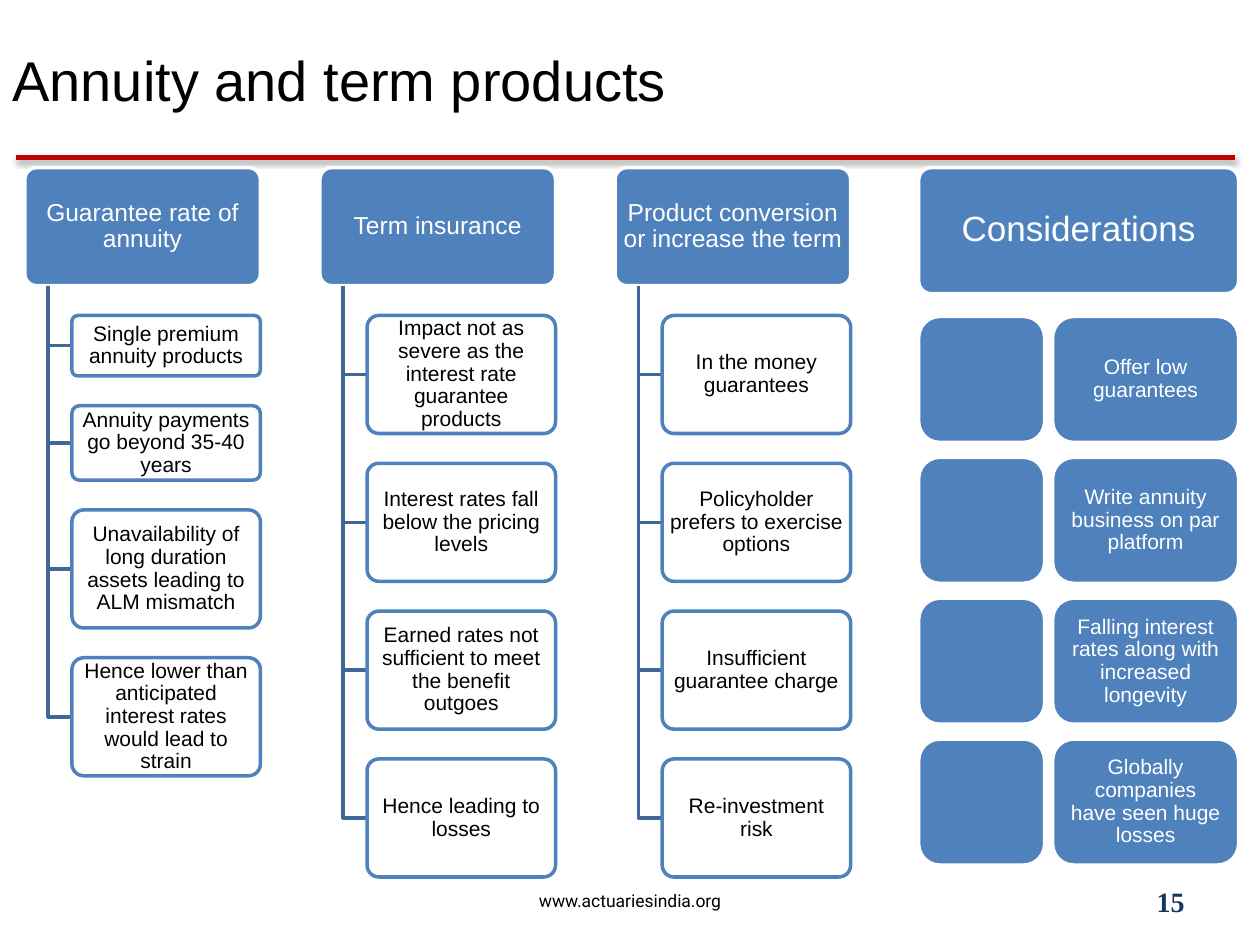
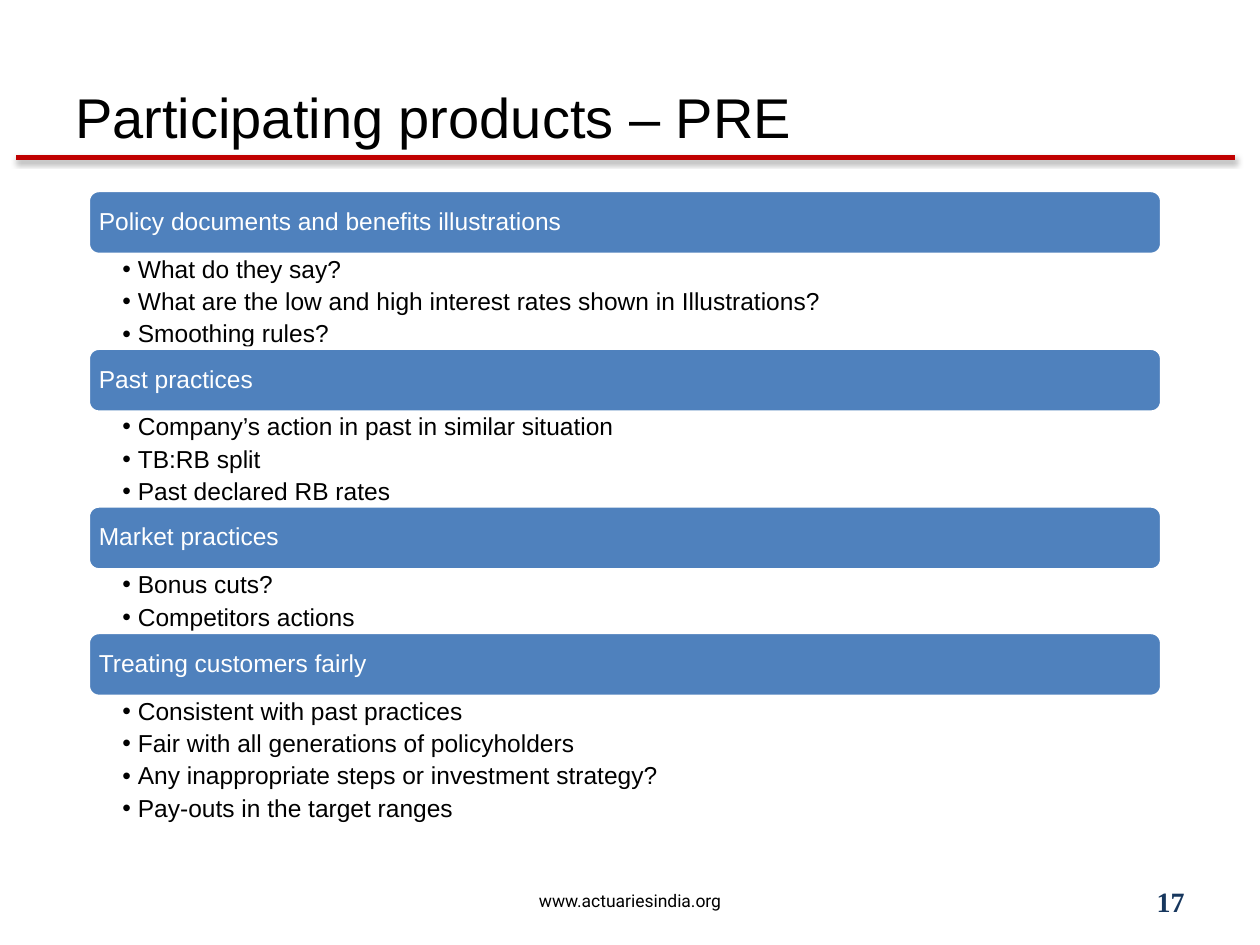
from lxml import etree
from pptx import Presentation
from pptx.dml.color import RGBColor
from pptx.enum.shapes import MSO_CONNECTOR, MSO_SHAPE
from pptx.enum.text import MSO_ANCHOR, PP_ALIGN
from pptx.oxml.ns import qn
from pptx.util import Cm, Pt

ROUNDED, STRAIGHT = MSO_SHAPE.ROUNDED_RECTANGLE, MSO_CONNECTOR.STRAIGHT
TOP, MIDDLE = MSO_ANCHOR.TOP, MSO_ANCHOR.MIDDLE
LEFT, CENTER, RIGHT = PP_ALIGN.LEFT, PP_ALIGN.CENTER, PP_ALIGN.RIGHT

BLUE, DARK_BLUE, NAVY = "4F81BD", "3F6797", "17375E"
RED, WHITE, BLACK = "C00000", "FFFFFF", "000000"

PRODUCTS = [
    ("Guarantee rate of annuity", [
        ("Single premium annuity products", 1.22),
        ("Annuity payments go beyond 35-40 years", 1.5),
        ("Unavailability of long duration assets leading to ALM mismatch", 2.38),
        ("Hence lower than anticipated interest rates would lead to strain", 2.38)]),
    ("Term insurance", [
        ("Impact not as severe as the interest rate guarantee products", 2.38),
        ("Interest rates fall below the pricing levels", 2.38),
        ("Earned rates not sufficient to meet the benefit outgoes", 2.38),
        ("Hence leading to losses", 2.38)]),
    ("Product conversion or increase the term", [
        ("In the money guarantees", 2.38),
        ("Policyholder prefers to exercise options", 2.38),
        ("Insufficient guarantee charge", 2.38),
        ("Re-investment risk", 2.38)]),
]
CONSIDERATIONS = [
    "Offer low guarantees",
    "Write annuity business on par platform",
    "Falling interest rates along with increased longevity",
    "Globally companies have seen huge losses",
]
EXPECTATIONS = [
    ("Policy documents and benefits illustrations", [
        "What do they say?",
        "What are the low and high interest rates shown in Illustrations?",
        "Smoothing rules?"]),
    ("Past practices", [
        "Company’s action in past in similar situation",
        "TB:RB split",
        "Past declared RB rates"]),
    ("Market practices", ["Bonus cuts?", "Competitors actions"]),
    ("Treating customers fairly", [
        "Consistent with past practices",
        "Fair with all generations of policyholders",
        "Any inappropriate steps or investment strategy?",
        "Pay-outs in the target ranges"]),
]


def rgb(color):
    return RGBColor.from_string(color)


def add_bullet(p, indent):
    pPr = p._p.get_or_add_pPr()
    pPr.set("marL", str(indent))
    pPr.set("indent", str(-indent))
    etree.SubElement(pPr, qn("a:buFont"), typeface="Arial")
    etree.SubElement(pPr, qn("a:buChar"), char="•")


def write_text(sp, *lines, size=12, color=BLACK, font="Arial", bold=False,
               align=LEFT, anchor=MIDDLE, insets=(0.25, 0.13, 0.25, 0.13),
               spacing=0.9, after=0, bullet=False):
    tf = sp.text_frame
    tf.word_wrap = True
    tf.vertical_anchor = anchor
    (tf.margin_left, tf.margin_top,
     tf.margin_right, tf.margin_bottom) = map(Cm, insets)
    for i, line in enumerate(lines):
        p = tf.add_paragraph() if i else tf.paragraphs[0]
        if bullet:
            add_bullet(p, Cm(0.31))
        p.alignment = align
        p.line_spacing = spacing
        p.space_after = Pt(after)
        r = p.add_run()
        r.text = line
        r.font.name, r.font.size, r.font.bold = font, Pt(size), bold
        r.font.color.rgb = rgb(color)


def add_text(s, x, y, w, h, *lines, **fmt):
    write_text(s.shapes.add_textbox(Cm(x), Cm(y), Cm(w), Cm(h)), *lines, **fmt)


def add_box(s, x, y, w, h, text=None, fill=BLUE, line=WHITE, corner=0.1, **fmt):
    sp = s.shapes.add_shape(ROUNDED, Cm(x), Cm(y), Cm(w), Cm(h))
    sp.adjustments[0] = corner
    sp.shadow.inherit = False
    sp.fill.solid()
    sp.fill.fore_color.rgb = rgb(fill)
    sp.line.color.rgb = rgb(line)
    sp.line.width = Pt(2)
    if text:
        write_text(sp, text, **fmt)


def add_elbow(s, x, top, bottom, right):
    builder = s.shapes.build_freeform(Cm(x), Cm(top), scale=1.0)
    builder.add_line_segments(
        [(Cm(x), Cm(bottom)), (Cm(right), Cm(bottom))], close=False)
    sp = builder.convert_to_shape()
    sp.shadow.inherit = False
    sp.fill.background()
    sp.line.color.rgb = rgb(DARK_BLUE)
    sp.line.width = Pt(2)


def add_rule(s):
    rule = s.shapes.add_connector(STRAIGHT, Cm(0.33), Cm(3.18), Cm(24.9), Cm(3.18))
    rule.line.color.rgb = rgb(RED)
    rule.line.width = Pt(3)
    effects = etree.SubElement(rule._element.spPr, qn("a:effectLst"))
    shadow = etree.SubElement(effects, qn("a:outerShdw"), blurRad=str(Pt(3.1)),
                              dist=str(Pt(1.6)), dir="5400000", rotWithShape="0")
    shade = etree.SubElement(shadow, qn("a:srgbClr"), val=BLACK)
    etree.SubElement(shade, qn("a:alpha"), val="38000")


def add_slide(prs, title, number, title_x, title_y):
    """Blank slide with the shared rule, title and footer."""
    s = prs.slides.add_slide(prs.slide_layouts[6])
    add_rule(s)
    add_text(s, title_x, title_y, 22.86, 3.18, title, size=32, spacing=1.0)
    add_text(s, 0, 17.65, 25.4, 1.02, "www.actuariesindia.org", size=10,
             font="Roboto", align=CENTER, spacing=1.0)
    add_text(s, 18.21, 17.65, 5.92, 1.02, str(number), size=16, color=NAVY,
             font="Times New Roman", bold=True, align=RIGHT, spacing=1.0)
    return s


def product_tree(s, x, y, heading, points):
    """Heading with its points hanging from a trunk below it."""
    width, head_h, gap, trunk, indent = 4.75, 2.38, 0.6, 0.47, 0.95
    tight = dict(align=CENTER, insets=(0.08, 0.05, 0.08, 0.05))
    add_box(s, x, y, width, head_h, heading, size=14, color=WHITE, **tight)
    top = y + head_h + gap
    for text, height in points:
        add_elbow(s, x + trunk, y + head_h, top + height / 2, x + indent)
        add_box(s, x + indent, top, width - indent, height, text,
                fill=WHITE, line=BLUE, **tight)
        top += height + gap


def considerations_panel(s, x, y, w, heading, points):
    """Heading over rows of an empty square and a labelled box."""
    side, head_gap, row_gap, col_gap = 2.54, 0.46, 0.3, 0.16
    add_box(s, x, y, w, side, heading, size=20, color=WHITE, align=CENTER,
            insets=(0.1, 0.08, 0.1, 0.08))
    label_x = side + col_gap
    for i, text in enumerate(points):
        top = y + side + head_gap + i * (side + row_gap)
        add_box(s, x, top, side, side, corner=0.167)
        add_box(s, x + label_x, top, w - label_x, side, text, corner=0.167,
                color=WHITE, align=CENTER, insets=(0.23,) * 4)


def banded_list(s, x, y, w, sections):
    """Heading bands, each followed by its bullets."""
    band_h, line_h = 1.29, 0.63
    for heading, bullets in sections:
        add_box(s, x, y, w, band_h, heading, corner=0.167, size=14,
                color=WHITE, insets=(0.15,) * 4)
        y += band_h
        height = line_h * len(bullets)
        add_text(s, x, y, w, height, *bullets, size=14, anchor=TOP,
                 insets=(0.69, 0.05, 0.28, 0.05), after=3.4, bullet=True)
        y += height


def main():
    prs = Presentation()
    prs.slide_width, prs.slide_height = Cm(25.4), Cm(19.05)

    s = add_slide(prs, "Annuity and term products", 15, 0, 0)
    for i, (heading, points) in enumerate(PRODUCTS):
        product_tree(s, 0.5 + i * 5.95, 3.38, heading, points)
    considerations_panel(s, 18.52, 3.38, 6.45, "Considerations", CONSIDERATIONS)

    s = add_slide(prs, "Participating products – PRE", 17, 1.27, 0.76)
    banded_list(s, 1.78, 3.84, 21.64, EXPECTATIONS)

    prs.save("out.pptx")


if __name__ == "__main__":
    main()
